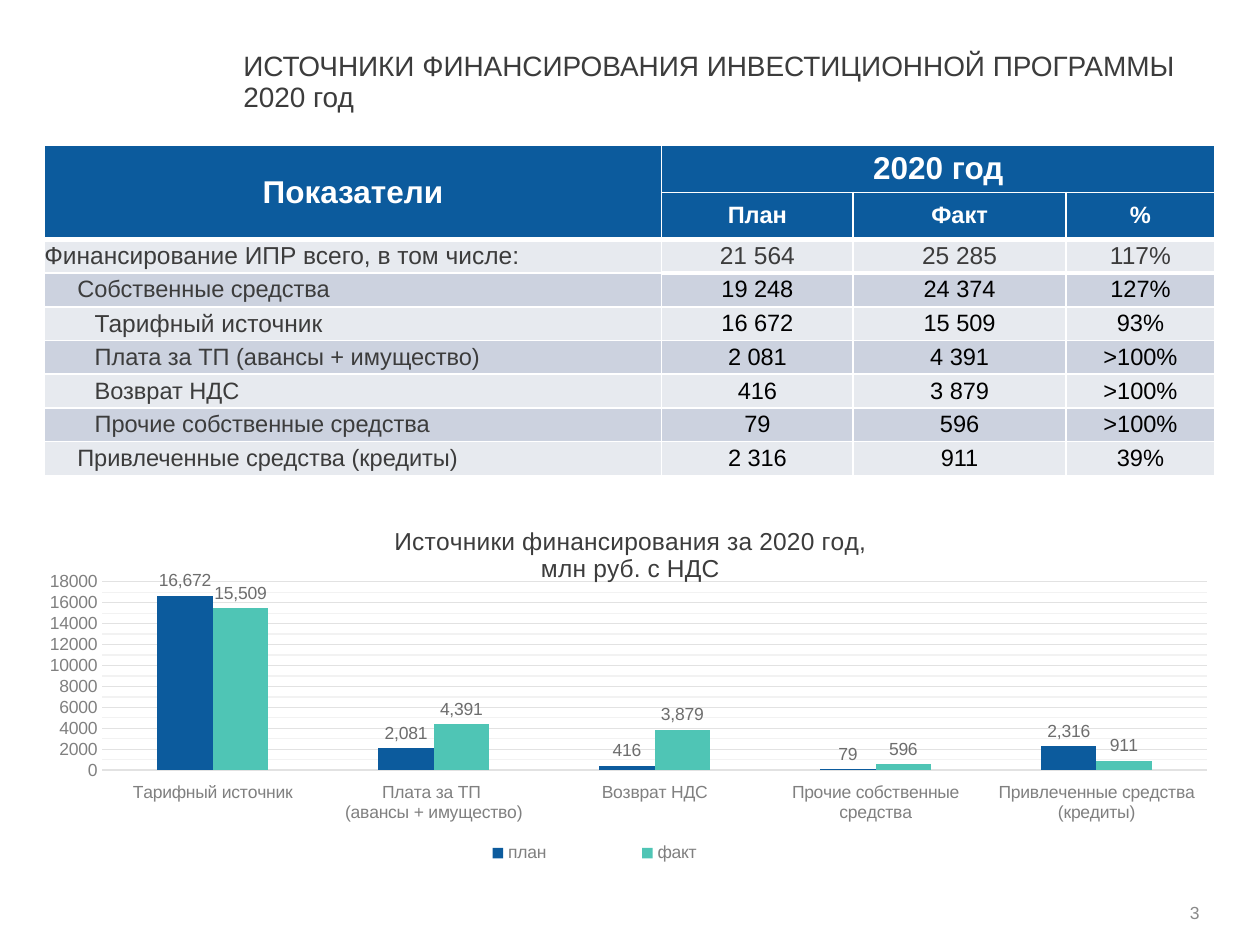
from lxml import etree
from pptx import Presentation
from pptx.chart.data import CategoryChartData
from pptx.dml.color import RGBColor
from pptx.enum.chart import XL_CHART_TYPE, XL_LABEL_POSITION, XL_LEGEND_POSITION
from pptx.enum.chart import XL_TICK_LABEL_POSITION, XL_TICK_MARK
from pptx.enum.text import MSO_ANCHOR, PP_ALIGN
from pptx.oxml import parse_xml
from pptx.oxml.ns import nsdecls, qn
from pptx.util import Pt

COLORS = {
    "text": "3C3C3C", "black": "000000", "white": "FFFFFF", "muted": "808080",
    "page": "8A8A8A", "label": "6D6D6D", "plan": "0C5B9D", "fact": "4FC5B5",
    "light": "E7EAEF", "dark": "CCD2DF", "grid": "E2E2E2", "minor": "F2F2F2",
}
# label, indent, label size, plan, fact, percent
ROWS = [
    ("Финансирование ИПР всего, в том числе:", 0, 14, "21 564", "25 285", "117%"),
    ("Собственные средства", 18.9, 13.5, "19 248", "24 374", "127%"),
    ("Тарифный источник", 28.8, 14, "16 672", "15 509", "93%"),
    ("Плата за ТП (авансы + имущество)", 28.8, 13.5, "2 081", "4 391", ">100%"),
    ("Возврат НДС", 28.8, 13.5, "416", "3 879", ">100%"),
    ("Прочие собственные средства", 28.8, 13.5, "79", "596", ">100%"),
    ("Привлеченные средства (кредиты)", 18.9, 13.5, "2 316", "911", "39%"),
]
CATEGORIES = ["Тарифный источник", "Плата за ТП \n(авансы + имущество)", "Возврат НДС",
              "Прочие собственные средства", "Привлеченные средства (кредиты)"]
SERIES = [("план", "plan", (16672, 2081, 416, 79, 2316)),
          ("факт", "fact", (15509, 4391, 3879, 596, 911))]


def rgb(name):
    return RGBColor.from_string(COLORS[name])


def set_font(font, size, color, bold=False):
    font.name = "Arial"
    font.size = Pt(size)
    font.bold = bold
    font.color.rgb = rgb(color)


def add_text(slide, box, lines, size, color, align=PP_ALIGN.LEFT,
             anchor=MSO_ANCHOR.TOP, spacing=1.0):
    frame = slide.shapes.add_textbox(*map(Pt, box)).text_frame
    frame.margin_left = frame.margin_right = frame.margin_top = frame.margin_bottom = 0
    frame.word_wrap = True
    frame.vertical_anchor = anchor
    frame.text = "\n".join(lines)
    for paragraph in frame.paragraphs:
        paragraph.alignment = align
        paragraph.line_spacing = spacing
        set_font(paragraph.font, size, color)


def set_borders(cell, top=1, bottom=1):
    properties = cell._tc.get_or_add_tcPr()
    for index, (side, width) in enumerate((("L", 1), ("R", 1), ("T", top), ("B", bottom))):
        properties.insert(index, parse_xml(
            f'<a:ln{side} {nsdecls("a")} w="{Pt(width)}"><a:solidFill>'
            f'<a:srgbClr val="{COLORS["white"]}"/></a:solidFill></a:ln{side}>'))


def fill_cell(cell, text, size, color, fill, align=PP_ALIGN.CENTER, bold=False,
              indent=0.7, top=1, bottom=1):
    cell.margin_left = Pt(indent)
    cell.margin_right = Pt(0.7)
    cell.margin_top = cell.margin_bottom = 0
    cell.vertical_anchor = MSO_ANCHOR.MIDDLE
    cell.fill.solid()
    cell.fill.fore_color.rgb = rgb(fill)
    cell.text = text
    paragraph = cell.text_frame.paragraphs[0]
    paragraph.alignment = align
    set_font(paragraph.font, size, color, bold)
    set_borders(cell, top, bottom)


def add_indicator_table(slide, box):
    column_widths = (352.8, 109.4, 121.7, 85)
    row_heights = [26.9] * 2 + [19.3] * len(ROWS)
    table = slide.shapes.add_table(len(row_heights), 4, *map(Pt, box)).table
    for column, width in zip(table.columns, column_widths):
        column.width = Pt(width)
    for row, height in zip(table.rows, row_heights):
        row.height = Pt(height)

    headers = (("Показатели", "2020 год", "", ""), ("", "План", "Факт", "%"))
    for row, (titles, size) in enumerate(zip(headers, (18, 13.5))):
        for column, title in enumerate(titles):
            thick = row == 1 or column == 0
            fill_cell(table.cell(row, column), title, size, "white", "plan",
                      bold=True, bottom=3 if thick else 1)
    table.cell(0, 0).merge(table.cell(1, 0))
    table.cell(0, 1).merge(table.cell(0, 3))

    for index, (label, indent, size, *values) in enumerate(ROWS):
        row = index + 2
        fill = "dark" if index % 2 else "light"
        top = 3 if index == 0 else 1
        fill_cell(table.cell(row, 0), label, size, "text", fill, PP_ALIGN.LEFT,
                  indent=indent, top=top)
        for column, value in enumerate(values, 1):
            fill_cell(table.cell(row, column), value, 14 if index == 0 else 13.5,
                      "text" if index == 0 else "black", fill,
                      top=3 if index < 2 else 1, bottom=3 if index == 0 else 1)


def set_layout(parent, inner=False, **fractions):
    """Place a chart part by fractions of the chart area."""
    for old in parent.findall(qn("c:layout")):
        parent.remove(old)
    layout = etree.Element(qn("c:layout"))
    manual = etree.SubElement(layout, qn("c:manualLayout"))
    if inner:
        etree.SubElement(manual, qn("c:layoutTarget")).set("val", "inner")
    for key in ("x", "y"):
        etree.SubElement(manual, qn(f"c:{key}Mode")).set("val", "edge")
    for key, value in fractions.items():
        etree.SubElement(manual, qn(f"c:{key}")).set("val", str(value))
    before = [child for child in parent
              if child.tag in (qn("c:tx"), qn("c:legendPos"), qn("c:legendEntry"))]
    parent.insert(len(before), layout)


def style_axes(chart):
    category_axis, value_axis = chart.category_axis, chart.value_axis
    for axis in (category_axis, value_axis):
        axis.major_tick_mark = axis.minor_tick_mark = XL_TICK_MARK.NONE
        set_font(axis.tick_labels.font, 10, "muted")
    category_axis.tick_label_position = XL_TICK_LABEL_POSITION.LOW
    category_axis.format.line.color.rgb = rgb("grid")
    category_axis.format.line.width = Pt(0.75)
    value_axis.format.line.fill.background()
    value_axis.minimum_scale, value_axis.maximum_scale = 0, 18000
    value_axis.major_unit, value_axis.minor_unit = 2000, 1000
    value_axis.has_major_gridlines = value_axis.has_minor_gridlines = True
    major_line = value_axis.major_gridlines.format.line
    major_line.color.rgb = rgb("grid")
    major_line.width = Pt(0.75)
    minor_gridlines = value_axis._element.find(qn("c:minorGridlines"))
    minor_gridlines.append(parse_xml(
        f'<c:spPr {nsdecls("c", "a")}><a:ln w="{Pt(0.75)}"><a:solidFill>'
        f'<a:srgbClr val="{COLORS["minor"]}"/></a:solidFill></a:ln></c:spPr>'))


def add_funding_chart(slide, box):
    data = CategoryChartData(number_format="General")
    data.categories = CATEGORIES
    for name, _, values in SERIES:
        data.add_series(name, values)
    chart = slide.shapes.add_chart(XL_CHART_TYPE.COLUMN_CLUSTERED, *map(Pt, box), data).chart
    set_font(chart.font, 10, "text")

    chart.has_title = True
    title_frame = chart.chart_title.text_frame
    title_frame.text = "Источники финансирования за 2020 год,\nмлн руб. с НДС"
    for paragraph in title_frame.paragraphs:
        set_font(paragraph.font, 14, "text")
    set_layout(chart.chart_title._element, x=0.3, y=0.05)

    chart.has_legend = True
    chart.legend.position = XL_LEGEND_POSITION.BOTTOM
    chart.legend.include_in_layout = False
    set_font(chart.legend.font, 10, "muted")
    set_layout(chart.legend._element, x=0.31, y=0.89, w=0.32, h=0.08)

    plot = chart.plots[0]
    plot.gap_width, plot.overlap = 199, 0
    plot.vary_by_categories = False
    set_layout(chart._chartSpace.chart.plotArea, inner=True, x=0.06, y=0.21, w=0.92, h=0.5)
    style_axes(chart)
    for series, (_, color, _) in zip(plot.series, SERIES):
        series.format.fill.solid()
        series.format.fill.fore_color.rgb = rgb(color)
        labels = series.data_labels
        labels.show_value = True
        labels.position = XL_LABEL_POSITION.OUTSIDE_END
        labels.number_format, labels.number_format_is_linked = "#,##0", False
        set_font(labels.font, 10, "label")


def main():
    presentation = Presentation()
    presentation.slide_width, presentation.slide_height = Pt(720), Pt(540)
    slide = presentation.slides.add_slide(presentation.slide_layouts[6])
    add_text(slide, (139, 30.2, 547, 34),
             ("ИСТОЧНИКИ ФИНАНСИРОВАНИЯ ИНВЕСТИЦИОННОЙ ПРОГРАММЫ", "2020 год"),
             16, "text", spacing=0.9)
    add_indicator_table(slide, (25.3, 83, 668.9, 188.9))
    add_funding_chart(slide, (17.3, 287.3, 686.2, 215.3))
    add_text(slide, (654.5, 514.8, 31, 13), ("3",), 10, "page",
             PP_ALIGN.RIGHT, MSO_ANCHOR.MIDDLE)
    presentation.save("out.pptx")


if __name__ == "__main__":
    main()
